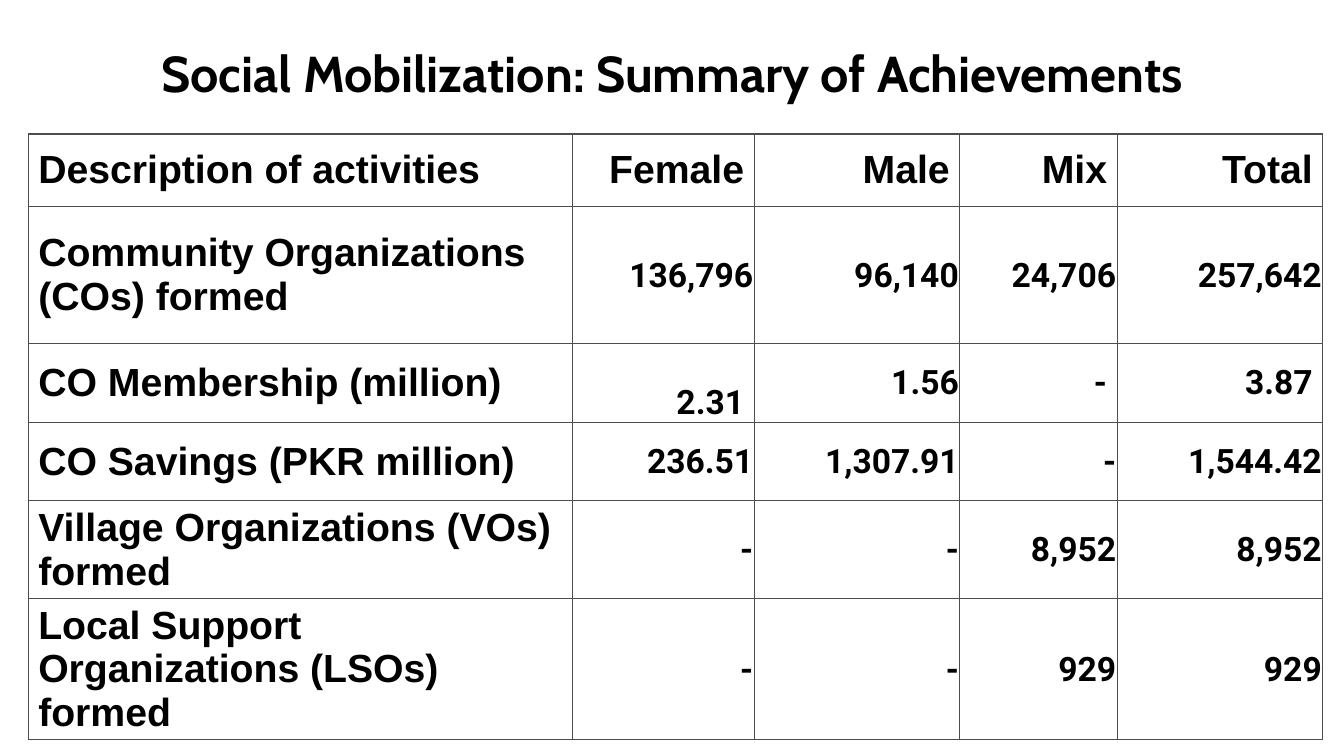
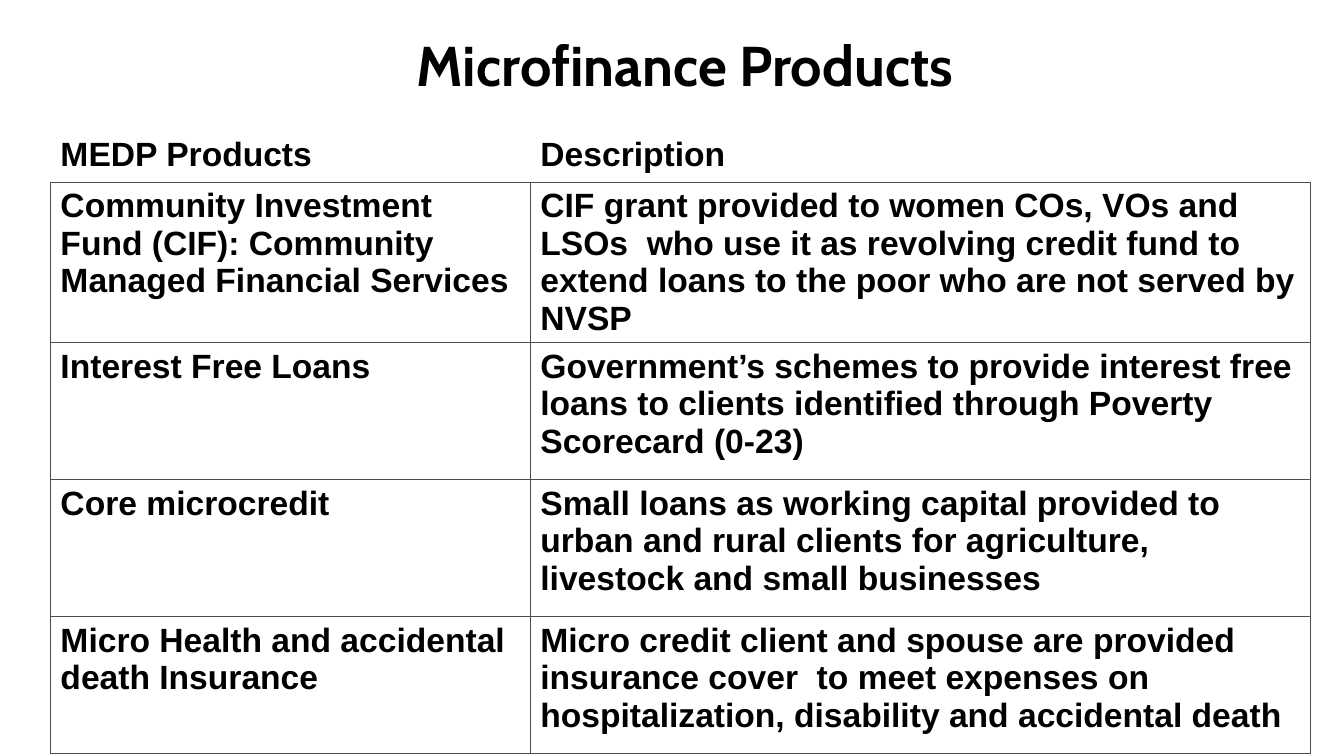
from dataclasses import dataclass

from lxml import etree
from pptx import Presentation
from pptx import util as u
from pptx.dml.color import RGBColor
from pptx.enum import text
from pptx.oxml import ns

COLOURS = {"ink": "000000", "paper": "FFFFFF", "rule": "4D4D4D"}
TITLE_FONT, LABEL_FONT, FIGURE_FONT = "Cabin", "Arial", "Roboto"
MIDDLE, TOP, BOTTOM = (
    text.MSO_ANCHOR.MIDDLE, text.MSO_ANCHOR.TOP, text.MSO_ANCHOR.BOTTOM)
LEFT, CENTER, RIGHT = (
    text.PP_ALIGN.LEFT, text.PP_ALIGN.CENTER, text.PP_ALIGN.RIGHT)
ALL_SIDES = ("L", "R", "T", "B")
TIGHT, ROOMY = 0.01, 0.1


@dataclass(frozen=True)
class Box:
    left: float
    top: float
    width: float
    height: float


@dataclass(frozen=True)
class CellStyle:
    size: int
    font: str = LABEL_FONT
    align: text.PP_ALIGN = LEFT
    anchor: text.MSO_ANCHOR = MIDDLE
    tight: bool = False
    right: float = ROOMY
    sides: tuple[str, ...] = ALL_SIDES
    filled: bool = True


@dataclass(frozen=True)
class Cell:
    words: str
    style: CellStyle


@dataclass(frozen=True)
class TableSpec:
    left: float
    top: float
    columns: list[float]
    heights: list[float]
    rows: list[list[Cell]]


def style_paragraph(para, font: str, size: int, align: text.PP_ALIGN) -> None:
    para.alignment = align
    para.font.name = font
    para.font.size = u.Pt(size)
    para.font.bold = True
    para.font.color.rgb = RGBColor.from_string(COLOURS["ink"])


def add_titled_slide(deck, title: str, size: int, box: Box):
    page = deck.slides.add_slide(deck.slide_layouts[5])
    holder = page.shapes.title
    holder.left, holder.top = u.Inches(box.left), u.Inches(box.top)
    holder.width, holder.height = u.Inches(box.width), u.Inches(box.height)
    frame = holder.text_frame
    frame.text = title
    frame.word_wrap = True
    frame.auto_size = text.MSO_AUTO_SIZE.NONE
    frame.vertical_anchor = MIDDLE
    style_paragraph(frame.paragraphs[0], TITLE_FONT, size, CENTER)
    return page


def draw_borders(cell, sides: tuple[str, ...]) -> None:
    properties = cell._tc.get_or_add_tcPr()
    for side in sides:
        line = etree.SubElement(
            properties, ns.qn(f"a:ln{side}"), w=str(u.Pt(1)))
        fill = etree.SubElement(line, ns.qn("a:solidFill"))
        etree.SubElement(fill, ns.qn("a:srgbClr"), val=COLOURS["rule"])


def fill_cell(cell, content: Cell) -> None:
    style = content.style
    cell.text = content.words
    cell.vertical_anchor = style.anchor
    if style.tight:
        cell.margin_left = cell.margin_top = u.Inches(TIGHT)
        cell.margin_bottom = u.Inches(0)
    cell.margin_right = u.Inches(style.right)
    style_paragraph(
        cell.text_frame.paragraphs[0], style.font, style.size, style.align)
    draw_borders(cell, style.sides)
    if style.filled:
        cell.fill.solid()
        cell.fill.fore_color.rgb = RGBColor.from_string(COLOURS["paper"])
    else:
        cell.fill.background()


def draw_table(page, spec: TableSpec) -> None:
    table = page.shapes.add_table(
        len(spec.rows), len(spec.columns),
        u.Inches(spec.left), u.Inches(spec.top),
        u.Inches(sum(spec.columns)), u.Inches(sum(spec.heights))).table
    table.first_row = table.horz_banding = False
    for column, width in zip(table.columns, spec.columns):
        column.width = u.Inches(width)
    for row, height, contents in zip(table.rows, spec.heights, spec.rows):
        row.height = u.Inches(height)
        for cell, content in zip(row.cells, contents):
            fill_cell(cell, content)


def achievement_rows() -> list[list[Cell]]:
    label = CellStyle(28)
    heading = CellStyle(28, filled=False)
    figure_heading = CellStyle(28, align=RIGHT, filled=False)
    figure = CellStyle(24, FIGURE_FONT, RIGHT, tight=True, right=TIGHT)
    inset = CellStyle(24, FIGURE_FONT, RIGHT, tight=True)
    lowered = CellStyle(24, FIGURE_FONT, RIGHT, BOTTOM, tight=True)

    headings = ["Female", "Male", "Mix", "Total"]
    activities = [
        ("Community Organizations (COs) formed",
         ["136,796", "96,140", "24,706", "257,642"]),
        ("CO Membership (million)", ["2.31", "1.56", "-", "3.87"]),
        ("CO Savings (PKR million)", ["236.51", "1,307.91", "-", "1,544.42"]),
        ("Village Organizations (VOs) formed", ["-", "-", "8,952", "8,952"]),
        ("Local Support Organizations (LSOs) formed",
         ["-", "-", "929", "929"]),
    ]
    # The membership figures sit differently from the others
    special = {"CO Membership (million)": [lowered, figure, inset, inset]}

    rows = [[Cell("Description of activities", heading)]
            + [Cell(words, figure_heading) for words in headings]]
    for name, figures in activities:
        styles = special.get(name, [figure] * len(figures))
        rows.append([Cell(name, label)] + list(map(Cell, figures, styles)))
    return rows


def product_rows() -> list[list[Cell]]:
    heading = CellStyle(24, sides=("B",), filled=False)
    body = CellStyle(24, anchor=TOP)
    products = [
        ("Community Investment Fund (CIF): Community Managed Financial "
         "Services",
         "CIF grant provided to women COs, VOs and LSOs  who use it as "
         "revolving credit fund to extend loans to the poor who are not "
         "served by NVSP"),
        ("Interest Free Loans",
         "Government’s schemes to provide interest free loans to clients "
         "identified through Poverty Scorecard (0-23)"),
        ("Core microcredit",
         "Small loans as working capital provided to urban and rural clients "
         "for agriculture, livestock and small businesses"),
        ("Micro Health and accidental death Insurance",
         "Micro credit client and spouse are provided insurance cover  to "
         "meet expenses on hospitalization, disability and accidental death"),
    ]
    rows = [[Cell("MEDP Products", heading), Cell("Description", heading)]]
    return rows + [[Cell(words, body) for words in pair] for pair in products]


def main() -> None:
    deck = Presentation()
    deck.slide_width, deck.slide_height = u.Inches(13.33), u.Inches(7.5)

    # Social mobilization figures
    page = add_titled_slide(
        deck, "Social Mobilization: Summary of Achievements", 36,
        Box(0.25, 0.33, 12.83, 0.78))
    draw_table(page, TableSpec(
        0.28, 1.33, [5.4, 1.8, 2.04, 1.56, 2.04],
        [0.72, 1.36, 0.78, 0.78, 0.97, 1.4], achievement_rows()))

    # Microfinance products
    page = add_titled_slide(
        deck, "Microfinance Products", 40, Box(2.17, 0.33, 9.25, 0.62))
    draw_table(page, TableSpec(
        0.5, 1.26, [4.76, 7.74], [0.55, 1.59] + [1.36] * 3, product_rows()))

    deck.save("out.pptx")


if __name__ == "__main__":
    main()
